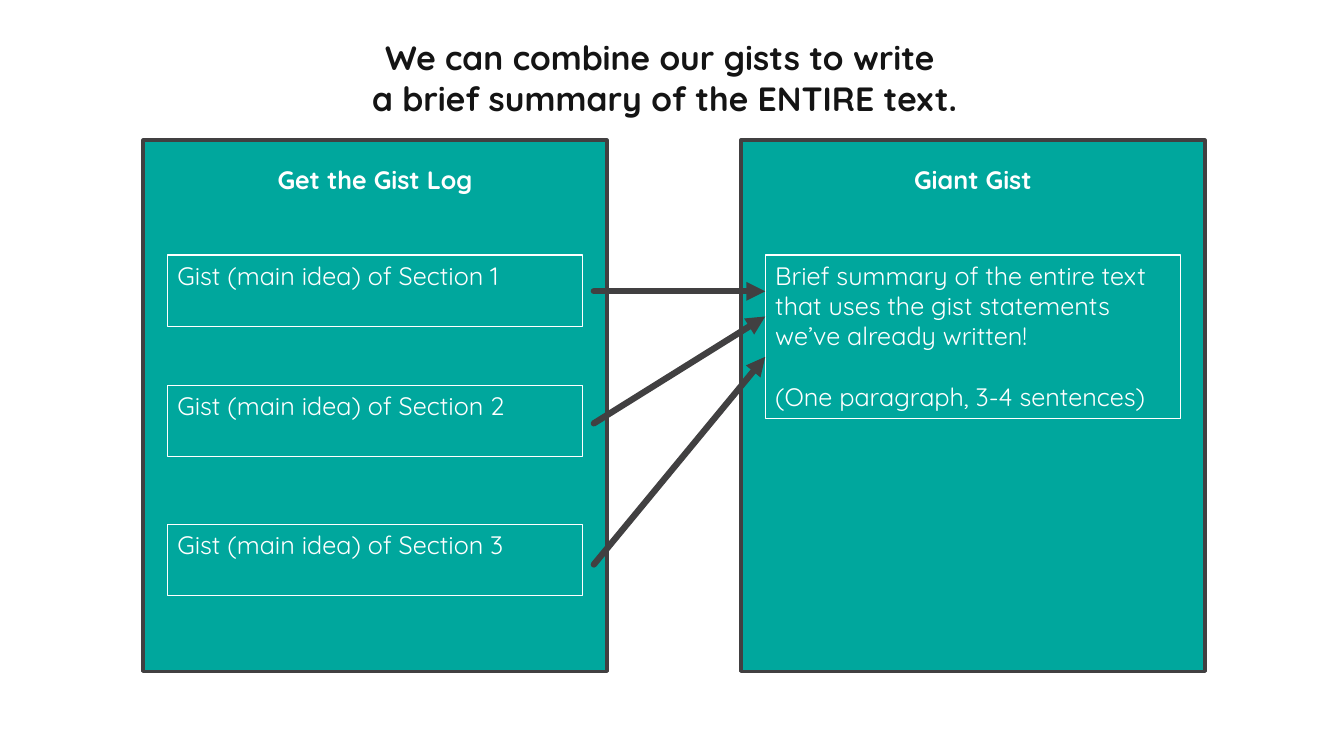
from dataclasses import dataclass

from lxml import etree
from pptx import Presentation
from pptx.dml.color import RGBColor
from pptx.enum.shapes import MSO_CONNECTOR, MSO_SHAPE
from pptx.enum.text import MSO_ANCHOR, PP_ALIGN
from pptx.oxml.ns import qn
from pptx.util import Inches, Pt

RECT = MSO_SHAPE.RECTANGLE
STRAIGHT = MSO_CONNECTOR.STRAIGHT
TOP = MSO_ANCHOR.TOP
LEFT, CENTER = PP_ALIGN.LEFT, PP_ALIGN.CENTER

FONT = "Quicksand"
TEAL, DARK, INK, WHITE = "00A79D", "414041", "141414", "FFFFFF"
INSET = 0.24  # from panel edge to the boxes inside
BOX_W = 4.12


@dataclass
class Box:
    top: float
    height: float
    lines: list[str]
    gap: float = 0  # points between paragraphs


@dataclass
class Panel:
    left: float
    title: str
    boxes: list[Box]


@dataclass
class Arrow:
    start: float
    end: float


PANELS = [
    Panel(1.42, "Get the Gist Log", [
        Box(top, 0.71, [f"Gist (main idea) of Section {num}"])
        for num, top in enumerate((2.53, 3.82, 5.2), 1)
    ]),
    Panel(7.35, "Giant Gist", [
        Box(2.53, 1.62, [
            "Brief summary of the entire text that uses the gist "
            "statements we’ve already written!",
            "(One paragraph, 3-4 sentences)",
        ], gap=21.6),
    ]),
]
ARROWS = [Arrow(2.89, 2.89), Arrow(4.2, 3.14), Arrow(5.6, 3.54)]


def color(code: str) -> RGBColor:
    return RGBColor.from_string(code)


def write(frame, lines: list[str], size: float, ink: str = WHITE,
          bold: bool = False, align=CENTER, gap: float = 0) -> None:
    frame.word_wrap = True
    frame.vertical_anchor = TOP
    for i, line in enumerate(lines):
        para = frame.add_paragraph() if i else frame.paragraphs[0]
        para.alignment = align
        if i and gap:
            para.space_before = Pt(gap)
        run = para.add_run()
        run.text = line
        run.font.name = FONT
        run.font.size = Pt(size)
        run.font.bold = bold
        run.font.color.rgb = color(ink)


def label(slide, left: float, top: float, width: float, height: float,
          lines: list[str], size: float, ink: str = WHITE) -> None:
    text = slide.shapes.add_textbox(
        Inches(left), Inches(top), Inches(width), Inches(height))
    write(text.text_frame, lines, size, ink, bold=True)


def rect(slide, left: float, top: float, width: float, height: float,
         edge: str, weight: float, fill: str | None = None):
    shape = slide.shapes.add_shape(
        RECT, Inches(left), Inches(top), Inches(width), Inches(height))
    shape.shadow.inherit = False
    if fill:
        shape.fill.solid()
        shape.fill.fore_color.rgb = color(fill)
    else:
        shape.fill.background()
    shape.line.color.rgb = color(edge)
    shape.line.width = Pt(weight)
    return shape


def draw_panel(slide, panel: Panel) -> None:
    rect(slide, panel.left, 1.39, 4.6, 5.27, DARK, 2.5, TEAL)
    left = panel.left + INSET
    label(slide, left, 1.58, BOX_W, 0.4, [panel.title], 18)
    for box in panel.boxes:
        shape = rect(slide, left, box.top, BOX_W, box.height, WHITE, 0.75)
        write(shape.text_frame, box.lines, 18, align=LEFT, gap=box.gap)


def draw_arrow(slide, arrow: Arrow) -> None:
    link = slide.shapes.add_connector(
        STRAIGHT, Inches(5.89), Inches(arrow.start),
        Inches(7.59), Inches(arrow.end))
    link.line.color.rgb = color(DARK)
    link.line.width = Pt(4.5)
    # Round cap, arrowhead and no shadow
    props = link._element.spPr
    line = props.find(qn("a:ln"))
    line.set("cap", "rnd")
    etree.SubElement(line, qn("a:round"))
    etree.SubElement(line, qn("a:tailEnd"), type="triangle")
    etree.SubElement(props, qn("a:effectLst"))


def main() -> None:
    deck = Presentation()
    deck.slide_width, deck.slide_height = Inches(13.33), Inches(7.5)
    slide = deck.slides.add_slide(deck.slide_layouts[6])

    # Heading
    label(slide, 0.83, 0.32, 11.52, 0.91, [
        "We can combine our gists to write ",
        "a brief summary of the ENTIRE text.",
    ], 24, INK)

    # Panels, then the arrows between them
    for panel in PANELS:
        draw_panel(slide, panel)
    for arrow in ARROWS:
        draw_arrow(slide, arrow)

    deck.save("out.pptx")


if __name__ == "__main__":
    main()
